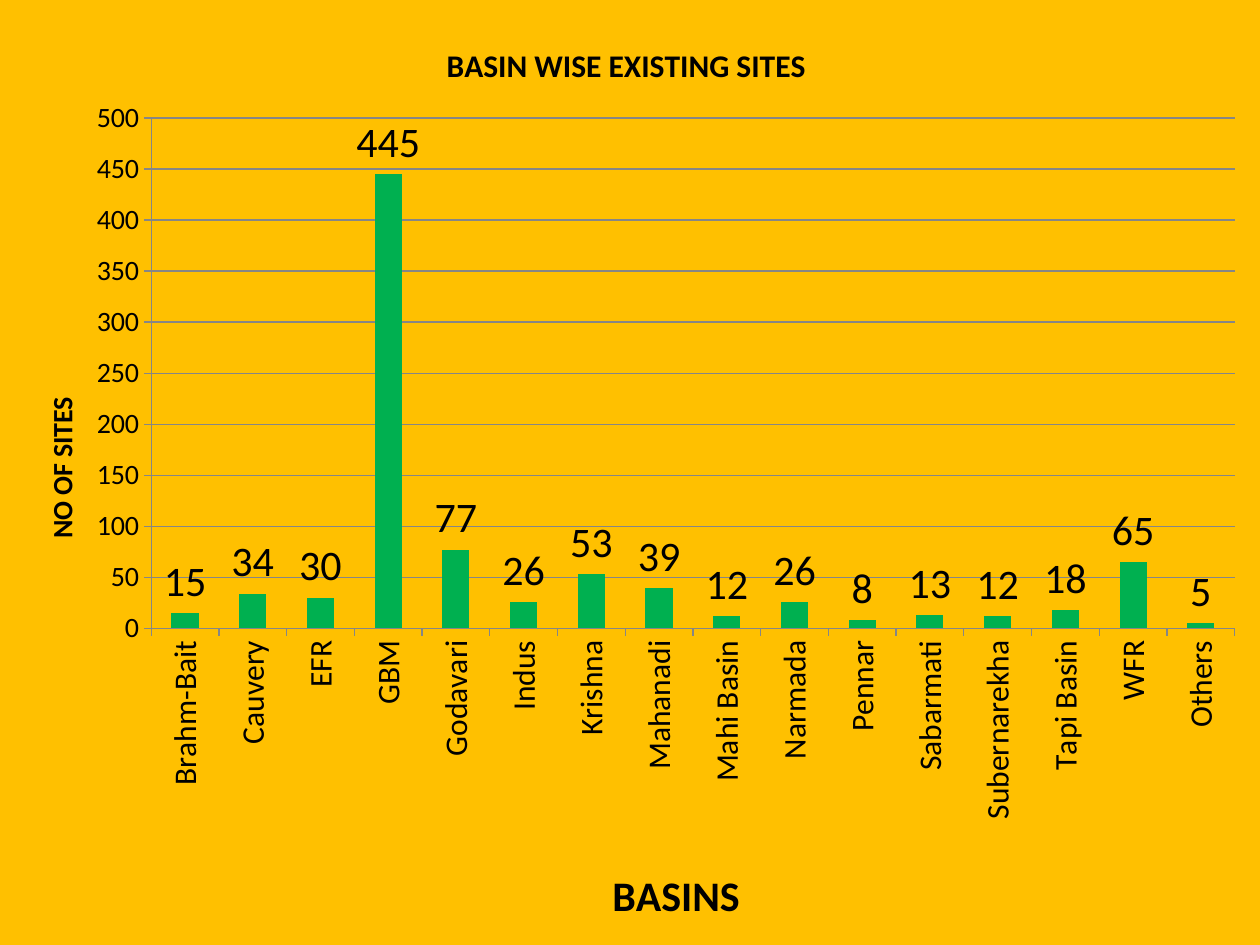
from lxml.etree import SubElement
from pptx import Presentation
from pptx.chart.data import CategoryChartData
from pptx.dml.color import RGBColor
from pptx.enum.chart import XL_CHART_TYPE, XL_LABEL_POSITION, XL_TICK_MARK
from pptx.oxml import parse_xml
from pptx.oxml.ns import nsdecls, qn
from pptx.util import Pt

AMBER = RGBColor(0xFF, 0xC0, 0x00)
GREEN = RGBColor(0x00, 0xB0, 0x50)
GREY = RGBColor(0x86, 0x86, 0x86)
BLACK = RGBColor(0x00, 0x00, 0x00)
FONT = "Calibri"
UPWARD = "-5400000"

SITES = {
    "Brahm-Bait": 15, "Cauvery": 34, "EFR": 30, "GBM": 445,
    "Godavari": 77, "Indus": 26, "Krishna": 53, "Mahanadi": 39,
    "Mahi Basin": 12, "Narmada": 26, "Pennar": 8, "Sabarmati": 13,
    "Subernarekha": 12, "Tapi Basin": 18, "WFR": 65, "Others": 5,
}


def format_font(font, size, bold=False):
    font.name = FONT
    font.size = Pt(size)
    font.bold = bold
    font.color.rgb = BLACK


def write_text(text_frame, text, size, bold=True, rotation=None):
    run = text_frame.paragraphs[0].add_run()
    run.text = text
    format_font(run.font, size, bold)
    if rotation:
        body = text_frame._txBody.find(qn("a:bodyPr"))
        body.set("rot", rotation)
        body.set("vert", "horz")


def set_layout(parent, after, **position):
    """Place a chart part by fractions of the chart's size."""
    for old in parent.findall(qn("c:layout")):
        parent.remove(old)
    layout = parse_xml(f"<c:layout {nsdecls('c')}/>")
    manual = SubElement(layout, qn("c:manualLayout"))
    if "w" in position:
        SubElement(manual, qn("c:layoutTarget")).set("val", "inner")
    for side in ("x", "y"):
        SubElement(manual, qn(f"c:{side}Mode")).set("val", "edge")
    for key, value in position.items():
        SubElement(manual, qn(f"c:{key}")).set("val", str(value))
    if after is None:
        parent.insert(0, layout)
    else:
        after.addnext(layout)


def format_axis(axis, title, title_size, label_size, rotation=None, **position):
    write_text(axis.axis_title.text_frame, title, title_size, rotation=rotation)
    title_xml = axis.axis_title._element
    set_layout(title_xml, title_xml.find(qn("c:tx")), **position)
    format_font(axis.tick_labels.font, label_size)
    axis.major_tick_mark = XL_TICK_MARK.OUTSIDE
    axis.minor_tick_mark = XL_TICK_MARK.NONE
    axis.format.line.color.rgb = GREY
    axis.format.line.width = Pt(0.75)


def add_sites_chart(slide, left, top, width, height):
    data = CategoryChartData()
    data.categories = list(SITES)
    data.add_series("Series 1", list(SITES.values()))
    chart = slide.shapes.add_chart(
        XL_CHART_TYPE.COLUMN_CLUSTERED, left, top, width, height, data).chart
    format_font(chart.font, 10)
    chart.has_legend = False

    # Background
    chart_space = chart._chartSpace
    chart_space.find(qn("c:chart")).addnext(parse_xml(
        f"<c:spPr {nsdecls('c', 'a')}><a:solidFill>"
        f'<a:srgbClr val="{AMBER}"/></a:solidFill>'
        "<a:ln><a:noFill/></a:ln></c:spPr>"))

    # Title and plot area
    chart.has_title = True
    write_text(chart.chart_title.text_frame, "BASIN WISE EXISTING SITES", 18)
    title_xml = chart.chart_title._element
    set_layout(title_xml, title_xml.find(qn("c:tx")), x=0.35, y=0.04)
    plot_area = chart_space.find(qn("c:chart")).find(qn("c:plotArea"))
    set_layout(plot_area, None, x=0.12, y=0.125, w=0.86, h=0.54)

    # Axes
    basins, counts = chart.category_axis, chart.value_axis
    format_axis(basins, "BASINS", 24, 18, x=0.48, y=0.91)
    basins.tick_labels.font  # label text properties exist from here on
    label_body = basins._element.find(qn("c:txPr")).find(qn("a:bodyPr"))
    label_body.set("rot", UPWARD)
    label_body.set("vert", "horz")
    format_axis(counts, "NO OF SITES", 16, 16, rotation=UPWARD, x=0.03, y=0.415)
    counts.minimum_scale, counts.maximum_scale, counts.major_unit = 0, 500, 50
    counts.has_major_gridlines = True
    counts.major_gridlines.format.line.color.rgb = GREY
    counts.major_gridlines.format.line.width = Pt(0.75)

    # Columns and their values
    plot = chart.plots[0]
    plot.gap_width = 150
    plot.vary_by_categories = False
    columns = plot.series[0]
    columns.format.fill.solid()
    columns.format.fill.fore_color.rgb = GREEN
    values = columns.data_labels
    values.show_value = True
    values.position = XL_LABEL_POSITION.OUTSIDE_END
    format_font(values.font, 24)


def main():
    deck = Presentation()
    deck.slide_width, deck.slide_height = Pt(720), Pt(540)
    slide = deck.slides.add_slide(deck.slide_layouts[6])
    add_sites_chart(slide, 0, 0, deck.slide_width, deck.slide_height)
    deck.save("out.pptx")


if __name__ == "__main__":
    main()
